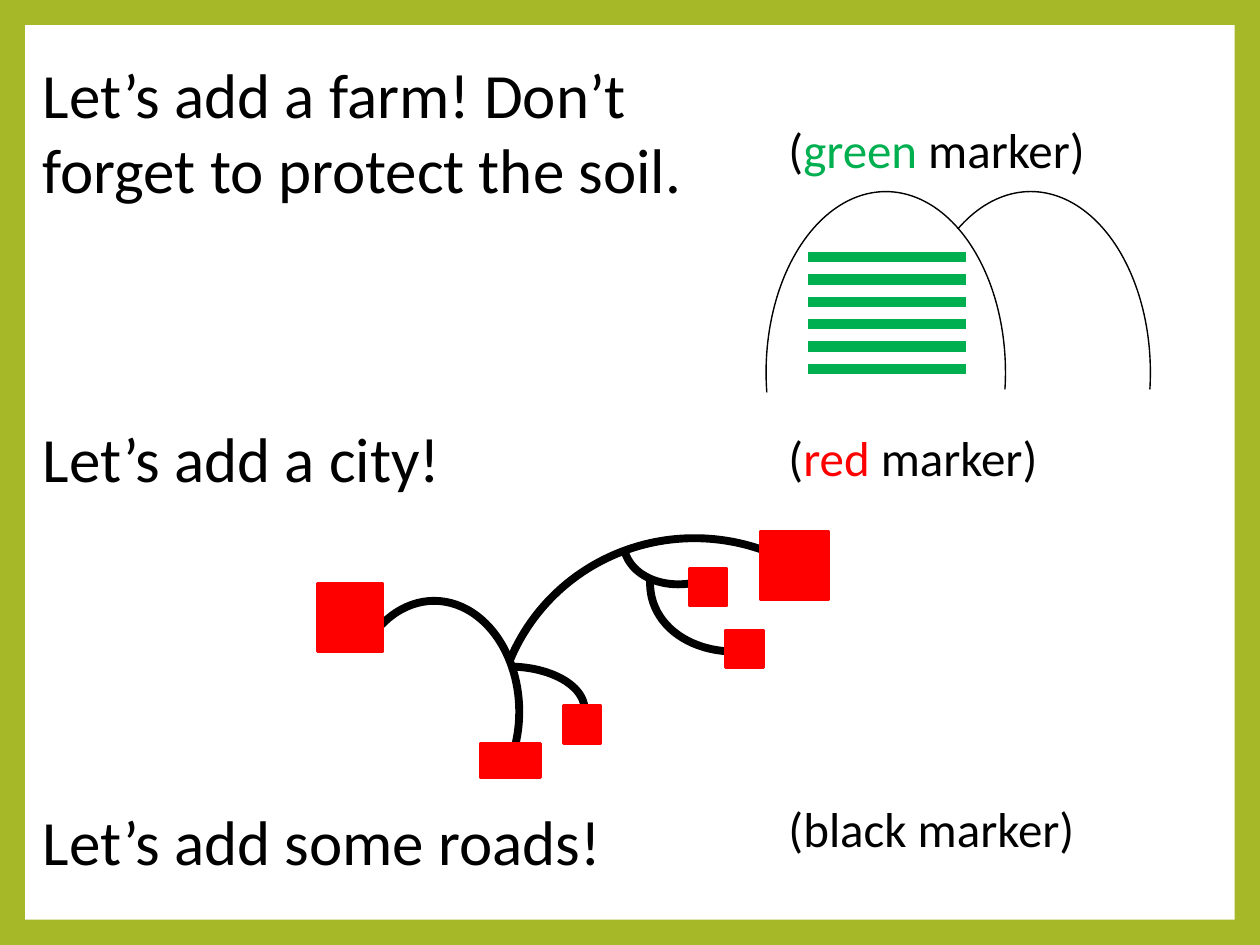
from lxml import etree
from pptx import Presentation
from pptx.dml.color import RGBColor
from pptx.enum.shapes import MSO_CONNECTOR, MSO_SHAPE
from pptx.enum.text import MSO_AUTO_SIZE
from pptx.oxml.ns import qn
from pptx.util import Pt

BLACK, WHITE, RED = "000000", "FFFFFF", "FF0000"
GREEN, OLIVE = "00B050", "A6B727"
MARKER_LEFT = 426.2
SMALL = 21.6


def color(value):
    return RGBColor.from_string(value)


def add_text(shapes, left, top, width, height, size, runs):
    box = shapes.add_textbox(Pt(left), Pt(top), Pt(width), Pt(height))
    frame = box.text_frame
    frame.word_wrap = True
    frame.auto_size = MSO_AUTO_SIZE.SHAPE_TO_FIT_TEXT
    for text, text_color in runs:
        run = frame.paragraphs[0].add_run()
        run.text = text
        run.font.name = "Calibri"
        run.font.size = Pt(size)
        run.font.color.rgb = color(text_color)


def add_heading(shapes, left, top, width, height, text):
    add_text(shapes, left, top, width, height, 36, [(text, BLACK)])


def add_marker(shapes, left, top, width, name, name_color):
    runs = [("(", BLACK), (name, name_color), (" marker)", BLACK)]
    add_text(shapes, left + MARKER_LEFT, top, width, 41, 28, runs)


def add_rectangle(shapes, left, top, width, height, fill, line_width=0):
    shape = shapes.add_shape(MSO_SHAPE.RECTANGLE, Pt(left), Pt(top), Pt(width), Pt(height))
    shape.shadow.inherit = False
    shape.fill.solid()
    shape.fill.fore_color.rgb = color(fill)
    if line_width:
        shape.line.color.rgb = color(fill)
        shape.line.width = Pt(line_width)
    else:
        shape.line.fill.background()


def add_arc(shapes, left, top, width, height, line_width, start=270, end=0, rotation=0):
    """Draw an arc clockwise between two angles in degrees."""
    arc = shapes.add_shape(MSO_SHAPE.ARC, Pt(left), Pt(top), Pt(width), Pt(height))
    arc.shadow.inherit = False
    # Angles are stored in 60000ths of a degree, adjustments in 100000ths
    arc.adjustments[0] = start * 0.6
    arc.adjustments[1] = end * 0.6
    arc.rotation = rotation
    arc.fill.background()
    arc.line.color.rgb = color(BLACK)
    arc.line.width = Pt(line_width)


def add_crop_row(shapes, left, top, width):
    row = shapes.add_connector(
        MSO_CONNECTOR.STRAIGHT, Pt(left), Pt(top), Pt(left + width), Pt(top))
    row.line.color.rgb = color(GREEN)
    row.line.width = Pt(6)
    etree.SubElement(row._element.spPr, qn("a:effectLst"))


def add_frame(slide, width, height, margin):
    slide.background.fill.solid()
    slide.background.fill.fore_color.rgb = color(OLIVE)
    add_rectangle(slide.shapes, margin, margin,
                  width - 2 * margin, height - 2 * margin, WHITE)


def add_roads(slide, left, top):
    shapes = slide.shapes.add_group_shape().shapes
    # x, y, width, height, start, end, rotation
    roads = [
        (353.5, 7.2, 110.9, 86.4, 289.18, 12.22, 166.1),
        (338.4, 0, 73.4, 55.4, 270, 0, 166.1),
        (267.1, 28.1, 227.5, 231.1, 270, 0, 292.8),
        (230.4, 103, 86.4, 49, 270, 0, 0),
        (182.2, 65.5, 97.2, 126.7, 235.7, 22.25, 0),
    ]
    for x, y, width, height, start, end, rotation in roads:
        add_arc(shapes, left + x, top + y, width, height, 4.5, start, end, rotation)
    add_heading(shapes, left, top + 177.1, 411, 51, "Let’s add some roads!")
    add_marker(shapes, left, top + 175, 232, "black", BLACK)


def add_city(slide, left, top):
    shapes = slide.shapes.add_group_shape().shapes
    add_heading(shapes, left, top, 316, 51, "Let’s add a city!")
    add_marker(shapes, left, top + 4.3, 249, "red", RED)
    # Buildings: x, y, width, height
    buildings = [
        (164.2, 97.2, 37.4, 38.9),
        (257, 188.6, 34.6, 19.4),
        (304.6, 167, SMALL, SMALL),
        (376.6, 88.6, SMALL, SMALL),
        (397.4, 123.8, SMALL, SMALL),
        (416.9, 67.7, 39.6, 38.9),
    ]
    for x, y, width, height in buildings:
        add_rectangle(shapes, left + x, top + y, width, height, RED, 1.5)


def add_farm(slide, left, top):
    shapes = slide.shapes.add_group_shape().shapes
    add_heading(shapes, left, top, 417, 94,
                "Let’s add a farm! Don’t forget to protect the soil.")
    add_marker(shapes, left, top + 36.7, 249, "green", GREEN)
    # Crop rows
    for index in range(6):
        add_crop_row(shapes, left + 444.2, top + 118.8 + index * 12.8, 90.7)
    # Hills
    for x, start in [(420.5, 170.43), (503.3, 243.03)]:
        add_arc(shapes, left + x, top + 81.4, 136.8, 206.6, 0.79, start, 8.11)


def main():
    presentation = Presentation()
    presentation.slide_width, presentation.slide_height = Pt(720), Pt(540)
    slide = presentation.slides.add_slide(presentation.slide_layouts[6])
    add_frame(slide, 720, 540, 14.4)
    add_roads(slide, 17.3, 277.9)
    add_city(slide, 17.3, 236.2)
    add_farm(slide, 17.3, 28.1)
    presentation.save("out.pptx")


if __name__ == "__main__":
    main()
